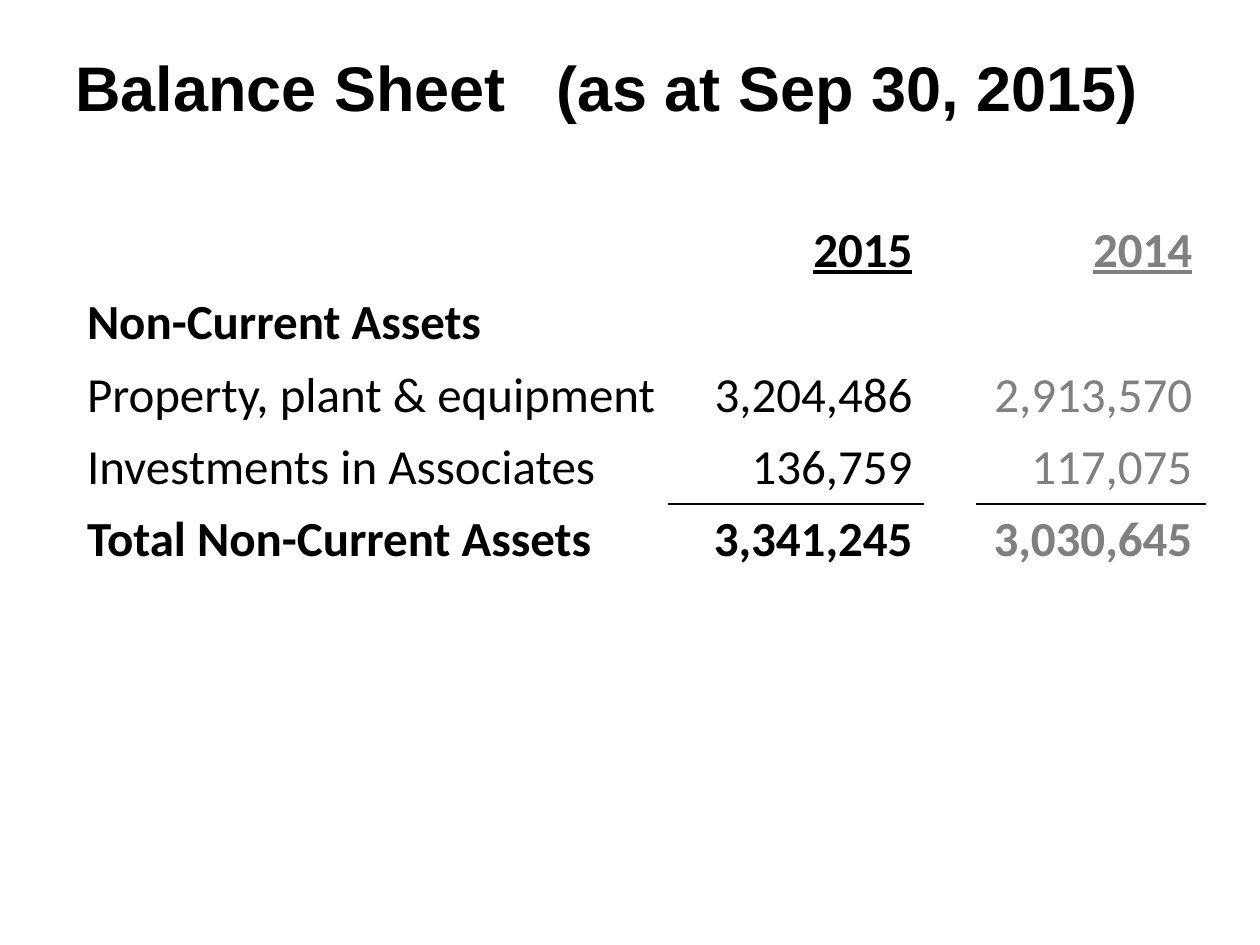
"""Build a balance sheet slide with a title and a table of non-current assets."""
from lxml import etree
from pptx import Presentation
from pptx.dml.color import RGBColor
from pptx.enum.text import MSO_ANCHOR, PP_ALIGN
from pptx.oxml.ns import qn
from pptx.util import Cm, Pt

LEFT, RIGHT = PP_ALIGN.LEFT, PP_ALIGN.RIGHT
MIDDLE = MSO_ANCHOR.MIDDLE
BLACK = RGBColor(0x00, 0x00, 0x00)
GREY = RGBColor(0x80, 0x80, 0x80)

WIDTHS = (11.99, 5.16, 1.04, 4.6)
ROW, LAST = 1.46, 0.66
YEARS = {1: BLACK, 3: GREY}
ROWS = (
    ("", "2015", "2014", True),
    ("Non-Current Assets", "", "", True),
    ("Property, plant & equipment", "3,204,486", "2,913,570", False),
    ("Investments in Associates", "136,759", "117,075", False),
    ("Total Non-Current Assets", "3,341,245", "3,030,645", True),
)
TOTAL = len(ROWS) - 1


def write(frame, text, font="Calibri", size=28, color=BLACK, bold=False,
          under=False, align=LEFT, tab=None):
    """Put one formatted paragraph into a text frame."""
    para = frame.paragraphs[0]
    para.alignment = align
    if tab:
        stops = etree.SubElement(para._p.get_or_add_pPr(), qn("a:tabLst"))
        etree.SubElement(stops, qn("a:tab"), pos=str(int(tab)), algn="l")
    run = para.add_run()
    run.text = text
    run.font.name = font
    run.font.size = Pt(size)
    run.font.bold = bold
    run.font.underline = under
    run.font.color.rgb = color


def add_title(slide, text):
    """Add the heading, with a tab stop before the date."""
    box = slide.shapes.add_textbox(Cm(1.27), Cm(0.74), Cm(24.13), Cm(2))
    frame = box.text_frame
    frame.word_wrap = True
    frame.vertical_anchor = MIDDLE
    write(frame, text, font="Arial", size=36, bold=True, tab=Cm(9.7))


def rule(cell, side):
    """Draw a thin black border on one side of a cell."""
    line = etree.Element(qn(f"a:{side}"), w=str(int(Pt(1))))
    fill = etree.SubElement(line, qn("a:solidFill"))
    etree.SubElement(fill, qn("a:srgbClr"), val=str(BLACK))
    cell._tc.get_or_add_tcPr().insert(0, line)


def add_sheet(slide):
    """Add the table of assets by year."""
    count = len(ROWS) + 1
    shape = slide.shapes.add_table(
        count, len(WIDTHS), Cm(1.5), Cm(4.32),
        Cm(sum(WIDTHS)), Cm(ROW * len(ROWS) + LAST))
    table = shape.table
    table.first_row = table.horz_banding = False
    for col, width in zip(table.columns, WIDTHS):
        col.width = Cm(width)
    for row in table.rows:
        row.height = Cm(ROW)
    table.rows[count - 1].height = Cm(LAST)
    for cell in table.iter_cells():
        cell.fill.background()

    for i, (label, *values, bold) in enumerate(ROWS):
        if label:
            write(table.cell(i, 0).text_frame, label, bold=bold)
        for (j, color), value in zip(YEARS.items(), values):
            if value:
                write(table.cell(i, j).text_frame, value, color=color,
                      bold=bold, under=i == 0, align=RIGHT)
    for j in YEARS:
        rule(table.cell(TOTAL - 1, j), "lnB")
        rule(table.cell(TOTAL, j), "lnT")


def main():
    """Build and save the slide."""
    deck = Presentation()
    deck.slide_width, deck.slide_height = Cm(25.4), Cm(19.05)
    slide = deck.slides.add_slide(deck.slide_layouts[6])
    add_title(slide, "Balance Sheet\t(as at Sep 30, 2015)")
    add_sheet(slide)
    deck.save("out.pptx")


if __name__ == "__main__":
    main()
